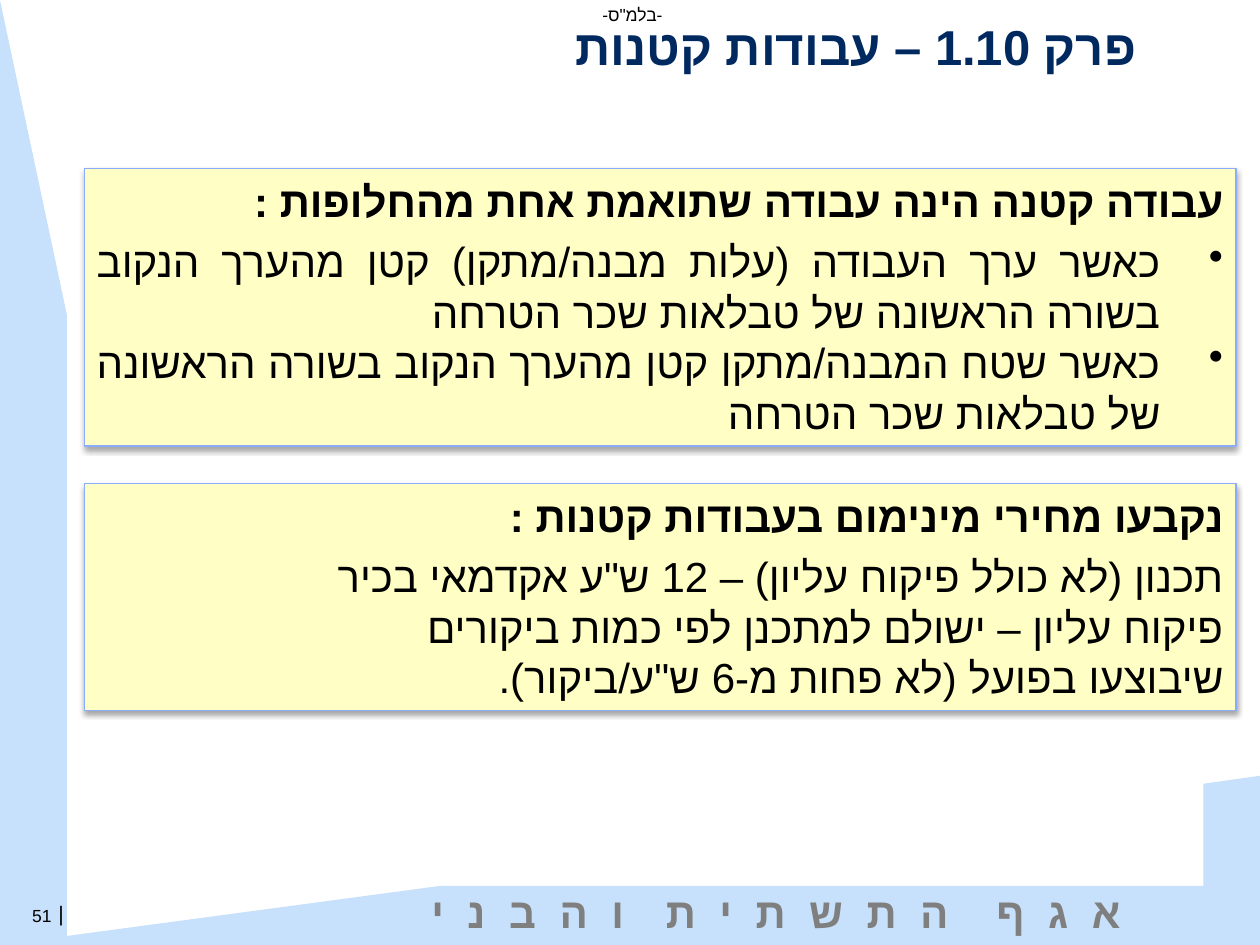
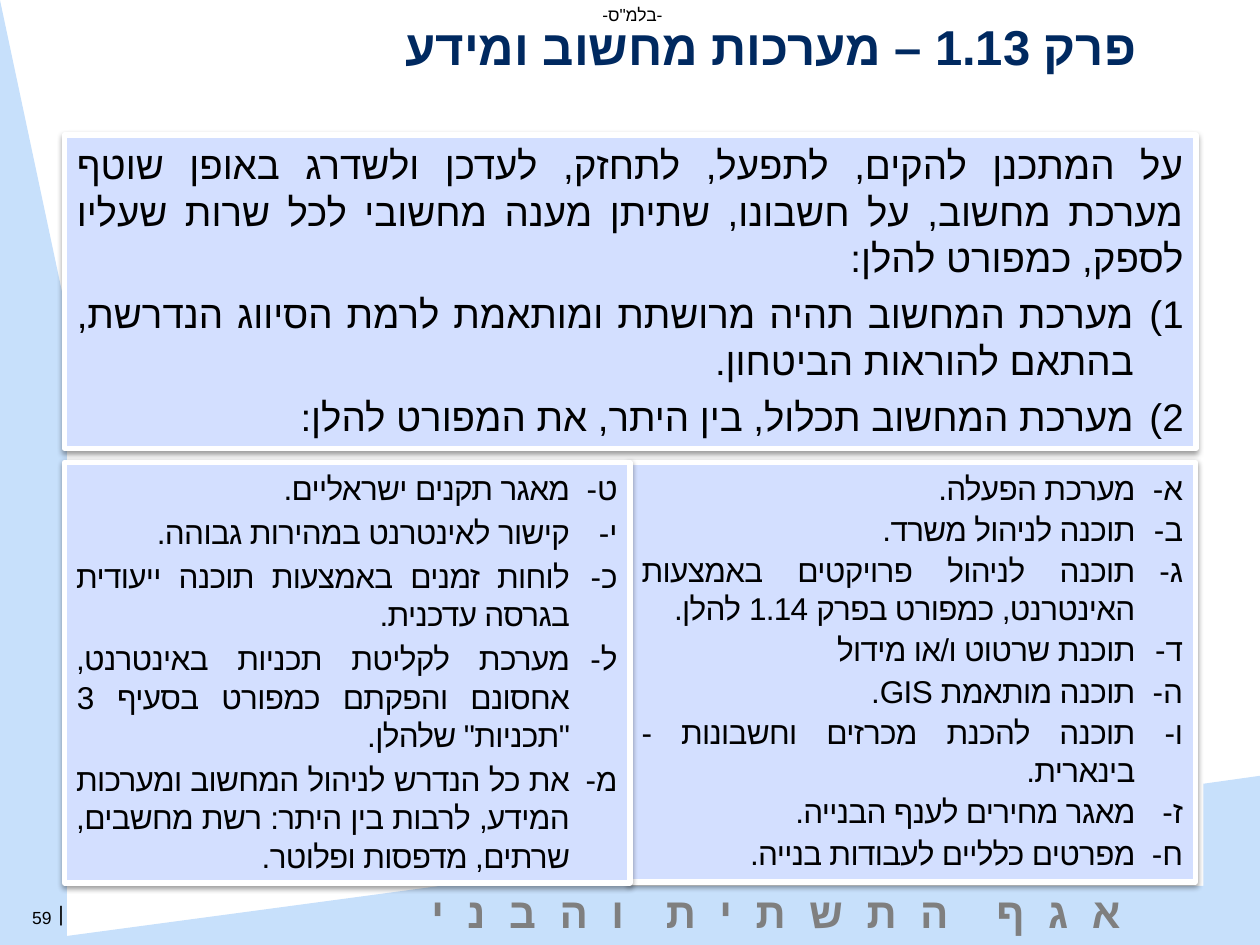
import lxml.etree
import pptx
import pptx.dml.color
import pptx.enum.lang
import pptx.enum.shapes
import pptx.enum.text
import pptx.oxml.ns
import pptx.util

Cm = pptx.util.Cm
Pt = pptx.util.Pt
RGBColor = pptx.dml.color.RGBColor
Align = pptx.enum.text.PP_ALIGN
qn = pptx.oxml.ns.qn

# Colours and font
NAVY = RGBColor(0x00, 0x29, 0x60)
BLACK = RGBColor(0x00, 0x00, 0x00)
GREY = RGBColor(0x7F, 0x7F, 0x7F)
WHITE = RGBColor(0xFF, 0xFF, 0xFF)
SKY = RGBColor(0xC7, 0xE0, 0xFB)
CREAM = RGBColor(0xFF, 0xFF, 0xC5)
CREAM_EDGE = RGBColor(0x8B, 0xAB, 0xFC)
LILAC = RGBColor(0xD3, 0xDF, 0xFF)
FONT = "Arial"

# Corners of the two background bands, in cm
SIDE_BAND = [(0, 19.05), (0, 0), (1.35, 6.35), (1.35, 19), (4.04, 19), (4.04, 19.05)]
FOOT_BAND = [(25.4, 19.05), (0, 19.05), (8.87, 17.86), (24.26, 17.86),
             (24.26, 15.8), (25.4, 15.64)]
UNIT_NAME = ["א ג ף", "ה ת ש ת י ת", "ו ה ב נ י ה"]


class SlideWriter:
    """Holds the deck, the current page and the shared style."""

    def __init__(self):
        self.deck = pptx.Presentation()
        self.deck.slide_width = Cm(25.4)
        self.deck.slide_height = Cm(19.05)
        self.page = None

    def start_page(self, title, number, title_left, number_top):
        self.page = self.deck.slides.add_slide(self.deck.slide_layouts[5])
        self.band(SIDE_BAND)
        self.band(FOOT_BAND)

        # Classification mark, divider and unit name
        frame = self.label(11.5, 0.08, 2.5, 0.43, wrap=True)
        self.span(self.para(frame, Align.CENTER), "-בלמ\"ס-", 10)
        frame = self.label(1.19, 18.16, 0.1, 0.5)
        self.span(self.para(frame), "|", 12)
        frame = self.label(7.98, 17.88, 14.73, 1.02, wrap=True)
        para = self.para(frame)
        for index, word in enumerate(UNIT_NAME):
            if index:
                self.span(para, " ", 24, GREY, True, gap=17)
            self.span(para, word, 24, GREY, True, gap=3.4)

        # Title and page number
        box = self.page.shapes.title
        self.place(box, title_left, 0.33, 22.9 - title_left, 1.19)
        self.prepare(box.text_frame, True)
        self.span(self.para(box.text_frame), title, 28, NAVY, True)
        frame = self.label(0.48, number_top, 0.56, 0.43)
        self.span(self.para(frame), number, 10)

    def place(self, box, left, top, width, height):
        box.left, box.top = Cm(left), Cm(top)
        box.width, box.height = Cm(width), Cm(height)

    def prepare(self, frame, wrap, side=0, edge=0):
        frame.word_wrap = wrap
        frame.auto_size = pptx.enum.text.MSO_AUTO_SIZE.SHAPE_TO_FIT_TEXT
        frame.vertical_anchor = pptx.enum.text.MSO_ANCHOR.TOP
        frame.margin_left = frame.margin_right = Cm(side)
        frame.margin_top = frame.margin_bottom = Cm(edge)

    def band(self, corners):
        points = [(Cm(x), Cm(y)) for x, y in corners]
        builder = self.page.shapes.build_freeform(*points[0])
        builder.add_line_segments(points[1:], close=True)
        band = builder.convert_to_shape()
        band.shadow.inherit = False
        band.fill.solid()
        band.fill.fore_color.rgb = SKY
        band.line.fill.background()

    def label(self, left, top, width, height, wrap=False):
        box = self.page.shapes.add_textbox(Cm(left), Cm(top), Cm(width), Cm(height))
        self.prepare(box.text_frame, wrap)
        return box.text_frame

    def panel(self, left, top, width, height, fill, edge, weight, shade, offset):
        box = self.page.shapes.add_shape(
            pptx.enum.shapes.MSO_SHAPE.RECTANGLE,
            Cm(left), Cm(top), Cm(width), Cm(height))
        box.fill.solid()
        box.fill.fore_color.rgb = fill
        box.line.color.rgb = edge
        box.line.width = Pt(weight)
        self.drop_shadow(box, shade, offset)
        self.prepare(box.text_frame, True, 0.25, 0.13)
        return box.text_frame

    def cream_panel(self, top, height):
        return self.panel(1.7, top, 23.22, height, CREAM, CREAM_EDGE, 0.75, 35, 1.8)

    def lilac_panel(self, left, top, width, height):
        return self.panel(left, top, width, height, LILAC, WHITE, 3, 38, 1.6)

    def drop_shadow(self, box, shade, offset):
        box.shadow.inherit = False
        effects = box._element.spPr.find(qn("a:effectLst"))
        shadow = lxml.etree.SubElement(
            effects, qn("a:outerShdw"), blurRad=str(Pt(3.1)), dist=str(Pt(offset)),
            dir="5400000", rotWithShape="0")
        colour = lxml.etree.SubElement(shadow, qn("a:srgbClr"), val=str(BLACK))
        lxml.etree.SubElement(colour, qn("a:alpha"), val=str(shade * 1000))

    def para(self, frame, align=Align.RIGHT, before=0, bullet=None, indent=0):
        """Add a right-to-left paragraph; bullet is (tag, attributes)."""
        para = frame.paragraphs[0]
        first = not para.runs
        if not first:
            para = frame.add_paragraph()
        props = para._p.get_or_add_pPr()
        props.set("rtl", "1")
        if bullet:
            tag, settings = bullet
            props.set("marL", str(Cm(indent)))
            props.set("indent", str(-Cm(indent)))
            lxml.etree.SubElement(props, qn(tag), settings)
        para.alignment = align
        para.space_before = Pt(0 if first else before)
        return para

    def span(self, para, text, size, colour=BLACK, bold=False, gap=0):
        span = para.add_run()
        span.text = text
        font = span.font
        font.name, font.size, font.bold = FONT, Pt(size), bold
        font.color.rgb = colour
        font.language_id = pptx.enum.lang.MSO_LANGUAGE_ID.HEBREW
        props = span._r.get_or_add_rPr()
        lxml.etree.SubElement(props, qn("a:cs"), typeface=FONT)
        if gap:
            props.set("spc", str(round(gap * 100)))

    def lines(self, frame, texts, size, bold=False, before=0, bullet=None,
              indent=0, pitch=None, gap=0):
        for text in texts:
            para = self.para(frame, Align.JUSTIFY, before, bullet, indent)
            if pitch:
                para.line_spacing = Pt(pitch)
            self.span(para, text, size, bold=bold, gap=gap)


def small_works(writer):
    writer.start_page("פרק 1.10 – עבודות קטנות", "51", 0.91, 18.24)

    # Definition
    frame = writer.cream_panel(3.4, 5.59)
    dot = ("a:buChar", {"char": "•"})
    writer.lines(frame, ["עבודה קטנה הינה עבודה שתואמת אחת מהחלופות :"], 24, bold=True)
    writer.lines(frame, [
        "כאשר ערך העבודה (עלות מבנה/מתקן) קטן מהערך הנקוב בשורה הראשונה של טבלאות שכר הטרחה",
    ], 24, before=6, bullet=dot, indent=1.27)
    writer.lines(frame, [
        "כאשר שטח המבנה/מתקן קטן מהערך הנקוב בשורה הראשונה של טבלאות שכר הטרחה",
    ], 24, bullet=dot, indent=1.27)

    # Minimum prices
    frame = writer.cream_panel(9.75, 4.57)
    writer.lines(frame, ["נקבעו מחירי מינימום בעבודות קטנות :"], 24, bold=True)
    writer.lines(frame, ["תכנון (לא כולל פיקוח עליון) – 12 ש\"ע אקדמאי בכיר"], 24, before=6)
    writer.lines(frame, [
        "פיקוח עליון – ישולם למתכנן לפי כמות ביקורים",
        "שיבוצעו בפועל (לא פחות מ-6 ש\"ע/ביקור).",
    ], 24)


def computer_systems(writer):
    writer.start_page("פרק 1.13 – מערכות מחשוב ומידע", "59", 1.09, 18.29)

    # Requirements
    frame = writer.lilac_panel(1.3, 2.72, 22.81, 6.32)
    writer.lines(frame, [
        "על המתכנן להקים, לתפעל, לתחזק, לעדכן ולשדרג באופן שוטף מערכת מחשוב, "
        "על חשבונו, שתיתן מענה מחשובי לכל שרות שעליו לספק, כמפורט להלן:",
    ], 22)
    writer.lines(frame, [
        "מערכת המחשוב תהיה מרושתת ומותאמת לרמת הסיווג הנדרשת, בהתאם להוראות הביטחון.",
        "מערכת המחשוב תכלול, בין היתר, את המפורט להלן:",
    ], 22, before=6, bullet=("a:buAutoNum", {"type": "arabicParenR"}), indent=1)

    # Lettered items, right column then left, set slightly tight
    frame = writer.lilac_panel(12.7, 9.32, 11.4, 8.46)
    writer.lines(frame, [
        "מערכת הפעלה.",
        "תוכנה לניהול משרד.",
        "תוכנה לניהול פרויקטים באמצעות האינטרנט, כמפורט בפרק 1.14 להלן.",
        "תוכנת שרטוט ו/או מידול",
        "תוכנה מותאמת GIS.",
        "תוכנה להכנת מכרזים וחשבונות - בינארית.",
        "מאגר מחירים לענף הבנייה.",
        "מפרטים כלליים לעבודות בנייה.",
    ], 18, before=2, bullet=("a:buAutoNum", {"type": "hebrew2Minus"}),
        indent=0.96, gap=-0.4)

    frame = writer.lilac_panel(1.3, 9.32, 11.4, 8.48)
    writer.lines(frame, [
        "מאגר תקנים ישראליים.",
        "קישור לאינטרנט במהירות גבוהה.",
        "לוחות זמנים באמצעות תוכנה ייעודית בגרסה עדכנית.",
        "מערכת לקליטת תכניות באינטרנט, אחסונם והפקתם כמפורט בסעיף 3 \"תכניות\" שלהלן.",
        "את כל הנדרש לניהול המחשוב ומערכות המידע, לרבות בין היתר: "
        "רשת מחשבים, שרתים, מדפסות ופלוטר.",
    ], 18, before=3, bullet=("a:buAutoNum", {"type": "hebrew2Minus", "startAt": "9"}),
        indent=0.96, pitch=22, gap=-0.4)


def main():
    writer = SlideWriter()
    small_works(writer)
    computer_systems(writer)
    writer.deck.save("out.pptx")


if __name__ == "__main__":
    main()
